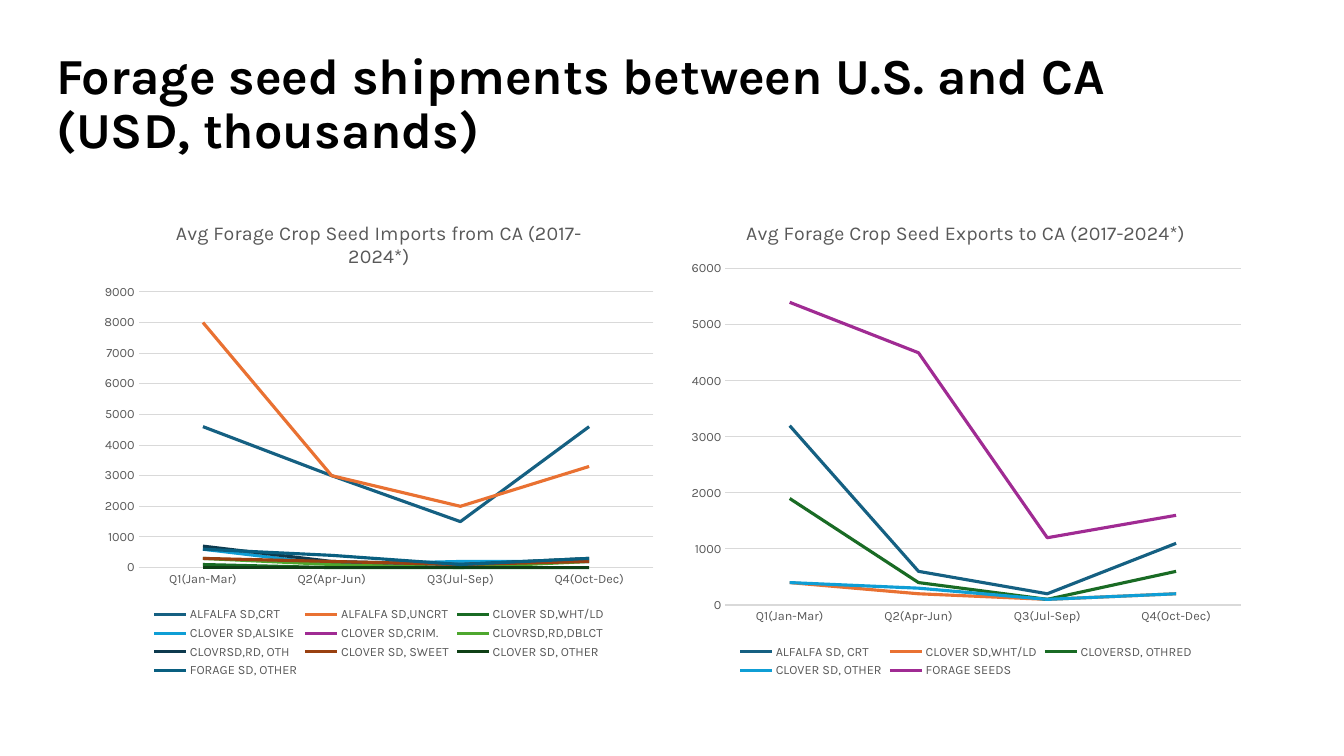
"""Build a slide comparing forage seed imports from and exports to CA by quarter."""
from dataclasses import dataclass

from pptx import Presentation
from pptx.chart.data import CategoryChartData
from pptx.dml.color import RGBColor
from pptx.enum.chart import XL_CHART_TYPE, XL_LEGEND_POSITION, XL_TICK_MARK
from pptx.enum.text import MSO_ANCHOR, MSO_AUTO_SIZE, PP_ALIGN
from pptx.util import Emu, Pt

TITLE_LINES = ["Forage seed shipments between U.S. and CA", "(USD, thousands)"]
QUARTERS = ["Q1(Jan-Mar)", "Q2(Apr-Jun)", "Q3(Jul-Sep)", "Q4(Oct-Dec)"]
EXPORTS = {
    "title": "Avg Forage Crop Seed Exports to CA (2017-2024*)",
    "column": 1,
    "maximum": 6000,
    "series": {
        "ALFALFA SD, CRT": (3200, 600, 200, 1100),
        "CLOVER SD,WHT/LD": (400, 200, 100, 200),
        "CLOVERSD, OTHRED": (1900, 400, 100, 600),
        "CLOVER SD, OTHER": (400, 300, 100, 200),
        "FORAGE SEEDS": (5400, 4500, 1200, 1600),
    },
}
IMPORTS = {
    "title": "Avg Forage Crop Seed Imports from CA (2017-2024*)",
    "column": 0,
    "maximum": 9000,
    "series": {
        "ALFALFA SD,CRT": (4600, 3000, 1500, 4600),
        "ALFALFA SD,UNCRT": (8000, 3000, 2000, 3300),
        "CLOVER SD,WHT/LD": (100, 0, 0, 0),
        "CLOVER SD,ALSIKE": (600, 100, 200, 200),
        "CLOVER SD,CRIM.": (0, 0, 0, 0),
        "CLOVRSD,RD,DBLCT": (300, 100, 0, 200),
        "CLOVRSD,RD, OTH": (700, 200, 100, 300),
        "CLOVER SD, SWEET": (300, 200, 100, 200),
        "CLOVER SD, OTHER": (0, 0, 0, 0),
        "FORAGE SD, OTHER": (600, 400, 100, 300),
    },
}

SLIDE_SIZE = (1344, 756)
TITLE_BOX = (46, 32, 1159, 146)
CHART_LEFT, CHART_TOP, CHART_WIDTH, CHART_HEIGHT = 93, 202, 572, 480
CHART_GAP = 15


@dataclass(frozen=True)
class Theme:
    """Fonts, colours and sizes used on the slide."""
    font: str = "Karla"
    black: str = "000000"
    grey: str = "595959"
    rule: str = "D9D9D9"
    title_size: int = 36
    chart_title_size: int = 14
    chart_size: int = 10
    label_size: int = 9
    rule_width: float = 0.75
    series_width: float = 2.25
    series_colors: tuple = ("156082", "E97132", "196B24", "0F9ED5", "A02B93",
                            "4EA72E", "0D3A4E", "994010", "0F4016", "095F80")


THEME = Theme()


def px(length):
    """Turn slide pixels into EMU."""
    return Emu(round(length * 914400 / 100.8))


def format_font(font, size, color, bold=False):
    """Apply the theme typeface with a size, colour and weight."""
    font.name = THEME.font
    font.size = Pt(size)
    font.bold = bold
    font.color.rgb = RGBColor.from_string(color)


def format_line(line, color, width):
    """Give a line a solid colour and a width in points."""
    line.color.rgb = RGBColor.from_string(color)
    line.width = Pt(width)


def write_text(text_frame, text, *, size, color, bold=False, align=None, spacing=None):
    """Write each line of text as one formatted paragraph."""
    for index, line in enumerate(text.split("\n")):
        paragraph = text_frame.add_paragraph() if index else text_frame.paragraphs[0]
        paragraph.alignment = align
        paragraph.line_spacing = spacing
        run = paragraph.add_run()
        run.text = line
        format_font(run.font, size, color, bold)


def add_title(slide):
    """Place and fill the slide title."""
    title = slide.shapes.title
    title.left, title.top, title.width, title.height = map(px, TITLE_BOX)
    text_frame = title.text_frame
    text_frame.word_wrap = True
    text_frame.auto_size = MSO_AUTO_SIZE.NONE
    text_frame.vertical_anchor = MSO_ANCHOR.MIDDLE
    write_text(text_frame, "\n".join(TITLE_LINES), size=THEME.title_size,
               color=THEME.black, bold=True, align=PP_ALIGN.LEFT, spacing=0.9)


def format_axes(chart, maximum):
    """Style both axes and the gridlines."""
    for axis in (chart.category_axis, chart.value_axis):
        axis.major_tick_mark = axis.minor_tick_mark = XL_TICK_MARK.NONE
        format_font(axis.tick_labels.font, THEME.label_size, THEME.grey)
    format_line(chart.category_axis.format.line, THEME.rule, THEME.rule_width)
    value_axis = chart.value_axis
    value_axis.minimum_scale, value_axis.maximum_scale = 0, maximum
    value_axis.major_unit = 1000
    value_axis.format.line.fill.background()
    format_line(value_axis.major_gridlines.format.line, THEME.rule, THEME.rule_width)


def add_shipment_chart(slide, shipments):
    """Add one line chart in its column."""
    data = CategoryChartData(number_format="0")
    data.categories = QUARTERS
    for name, values in shipments["series"].items():
        data.add_series(name, values)
    left = CHART_LEFT + shipments["column"] * (CHART_WIDTH + CHART_GAP)
    box = map(px, (left, CHART_TOP, CHART_WIDTH, CHART_HEIGHT))
    chart = slide.shapes.add_chart(XL_CHART_TYPE.LINE, *box, data).chart
    format_font(chart.font, THEME.chart_size, THEME.black)
    chart.has_title = True
    chart.chart_title.include_in_layout = False
    write_text(chart.chart_title.text_frame, shipments["title"],
               size=THEME.chart_title_size, color=THEME.grey)
    chart.has_legend = True
    chart.legend.position = XL_LEGEND_POSITION.BOTTOM
    chart.legend.include_in_layout = False
    format_font(chart.legend.font, THEME.label_size, THEME.grey)
    format_axes(chart, shipments["maximum"])
    plot = chart.plots[0]
    plot.vary_by_categories = False
    for series, color in zip(plot.series, THEME.series_colors):
        series.smooth = False
        format_line(series.format.line, color, THEME.series_width)


def main():
    """Build and save the presentation."""
    presentation = Presentation()
    presentation.slide_width, presentation.slide_height = map(px, SLIDE_SIZE)
    slide = presentation.slides.add_slide(presentation.slide_layouts.get_by_name("Title Only"))
    add_title(slide)
    for shipments in (EXPORTS, IMPORTS):
        add_shipment_chart(slide, shipments)
    presentation.save("out.pptx")


if __name__ == "__main__":
    main()
